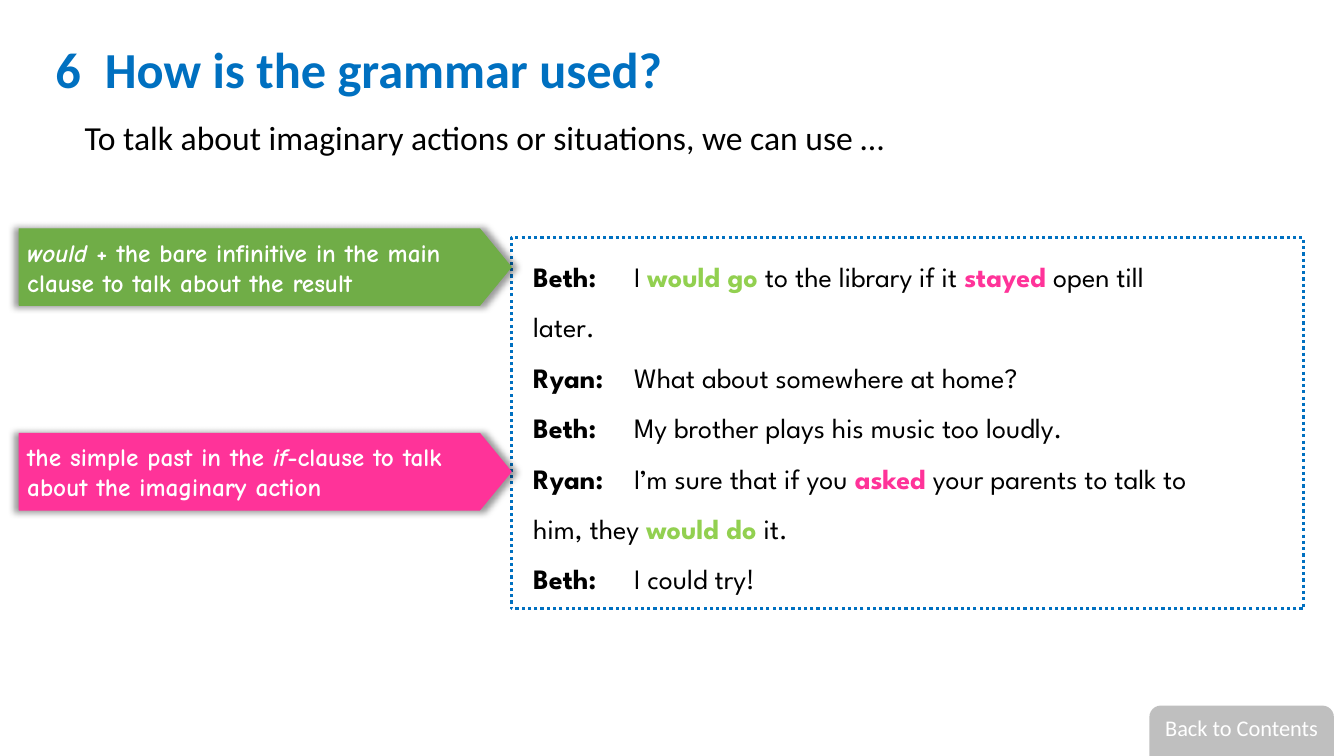
import pptx
import pptx.util
import pptx.dml.color
import pptx.enum.dml
import pptx.enum.shapes
import pptx.enum.text
import pptx.oxml
import pptx.oxml.ns
from dataclasses import dataclass

Inches, Pt = pptx.util.Inches, pptx.util.Pt
RGB = pptx.dml.color.RGBColor.from_string
SHAPE = pptx.enum.shapes.MSO_SHAPE
ALIGN = pptx.enum.text.PP_ALIGN
ANCHOR = pptx.enum.text.MSO_ANCHOR


@dataclass(frozen=True)
class Theme:
    blue: str = "0070C0"
    green: str = "70AD47"
    lime: str = "92D050"
    pink: str = "FF3399"
    grey: str = "BFBFBF"
    black: str = "000000"
    white: str = "FFFFFF"
    body: str = "Calibri"
    dialogue: str = "League Spartan"
    note: str = "Comic Neue"
    title_size: int = 36
    intro_size: int = 24
    dialogue_size: int = 20
    note_size: int = 18
    button_size: int = 16


T = Theme()


def add_run(p, text, font, size, color, bold=False, italic=False):
    r = p.add_run()
    r.text = text
    r.font.name, r.font.size = font, Pt(size)
    r.font.bold, r.font.italic = bold, italic
    r.font.color.rgb = RGB(color)


def add_box(shapes, kind, left, top, width, height, fill):
    sp = shapes.add_shape(kind, Inches(left), Inches(top), Inches(width), Inches(height))
    sp.shadow.inherit = False
    sp.fill.solid()
    sp.fill.fore_color.rgb = RGB(fill)
    sp.line.fill.background()
    sp.text_frame.word_wrap = True
    return sp


prs = pptx.Presentation()
prs.slide_width, prs.slide_height = Inches(13.33), Inches(7.5)
s = prs.slides.add_slide(prs.slide_layouts[5])

# Title
title = s.shapes.title
title.left, title.top = Inches(0.55), Inches(0.42)
title.width, title.height = Inches(6.11), Inches(0.63)
title.fill.solid()
title.fill.fore_color.rgb = RGB(T.white)
tf = title.text_frame
tf.margin_left = tf.margin_top = tf.margin_right = tf.margin_bottom = 0
tf.vertical_anchor = ANCHOR.TOP
tf.auto_size = pptx.enum.text.MSO_AUTO_SIZE.NONE
p = tf.paragraphs[0]
p.alignment, p.line_spacing = ALIGN.LEFT, Pt(40)
pPr = p._p.get_or_add_pPr()
pPr.set("marL", str(Inches(0.49)))
pPr.set("indent", str(-Inches(0.49)))
add_run(p, "6\tHow is the grammar used?", T.body, T.title_size, T.blue, bold=True)

# Dialogue in a dotted frame; the right margin sets where lines wrap
group = s.shapes.add_group_shape()
frame = add_box(group.shapes, SHAPE.RECTANGLE, 5.07, 2.36, 7.86, 3.68, T.white)
frame.line.color.rgb = RGB(T.blue)
frame.line.width = Pt(2.25)
frame.line.dash_style = pptx.enum.dml.MSO_LINE.ROUND_DOT
tb = group.shapes.add_textbox(Inches(5.19), Inches(2.36), Inches(7.61), Inches(3.3))
tf = tb.text_frame
tf.word_wrap = True
tf.margin_right = Inches(0.92)
dialogue = [
    ("Beth:", [("I ", T.black), ("would go", T.lime), (" to the library if it ", T.black),
               ("stayed", T.pink), (" open till later.", T.black)]),
    ("Ryan:", [("What about somewhere at home?", T.black)]),
    ("Beth:", [("My brother plays his music too loudly.", T.black)]),
    ("Ryan:", [("I’m sure that if you ", T.black), ("asked", T.pink),
               (" your parents to talk to him, they ", T.black),
               ("would do", T.lime), (" it.", T.black)]),
    ("Beth:", [("I could try!", T.black)]),
]
for i, (speaker, parts) in enumerate(dialogue):
    p = tf.add_paragraph() if i else tf.paragraphs[0]
    p.line_spacing = 1.5
    add_run(p, speaker, T.dialogue, T.dialogue_size, T.black, bold=True)
    add_run(p, "\t", T.dialogue, T.dialogue_size, T.black)
    for text, color in parts:
        add_run(p, text, T.dialogue, T.dialogue_size, color, bold=color != T.black)

# Introduction
outline = s.shapes.build_freeform(Inches(0.74), Inches(1.11))
outline.add_line_segments([(Inches(x), Inches(y)) for x, y in
                           [(9.74, 1.11), (9.74, 1.61), (0.74, 1.61)]], close=True)
intro = outline.convert_to_shape()
intro.shadow.inherit = False
intro.fill.background()
intro.line.fill.background()
tf = intro.text_frame
tf.word_wrap = True
tf.vertical_anchor = ANCHOR.TOP
p = tf.paragraphs[0]
p.alignment = ALIGN.LEFT
add_run(p, "To talk about imaginary actions or situations, we can use …",
        T.body, T.intro_size, T.black)

# Arrow notes with a soft shadow; each part is text and whether it is italic
SHADOW = (f'<a:outerShdw {pptx.oxml.ns.nsdecls("a")} blurRad="{Pt(5)}" '
          f'sx="102000" sy="102000" algn="ctr" rotWithShape="0">'
          f'<a:srgbClr val="{T.black}"><a:alpha val="40000"/></a:srgbClr></a:outerShdw>')
notes = [
    (2.27, T.green, [("would", True),
                     (" + the bare infinitive in the main clause to talk about the result", False)]),
    (4.3, T.pink, [("the simple past in the ", False), ("if", True),
                   ("-clause to talk about the imaginary action", False)]),
]
for top, color, parts in notes:
    sp = add_box(s.shapes, SHAPE.PENTAGON, 0.19, top, 4.88, 0.76, color)
    sp.adjustments[0] = 0.41
    sp.line.color.rgb = RGB(color)
    sp.line.width = Pt(0.75)
    effects = sp._element.spPr.find(pptx.oxml.ns.qn("a:effectLst"))
    effects.append(pptx.oxml.parse_xml(SHADOW))
    tf = sp.text_frame
    tf.margin_left = tf.margin_top = tf.margin_right = tf.margin_bottom = Inches(0.08)
    tf.vertical_anchor = ANCHOR.MIDDLE
    p = tf.paragraphs[0]
    p.alignment = ALIGN.LEFT
    for text, italic in parts:
        add_run(p, text, T.note, T.note_size, T.white, bold=True, italic=italic)

# Contents button
button = add_box(s.shapes, SHAPE.ROUNDED_RECTANGLE, 11.4, 7, 1.83, 0.68, T.grey)
tf = button.text_frame
tf.vertical_anchor = ANCHOR.TOP
tf.margin_top = Inches(0.05)
p = tf.paragraphs[0]
p.alignment = ALIGN.CENTER
add_run(p, "Back to Contents", T.body, T.button_size, T.white)

prs.save("out.pptx")
